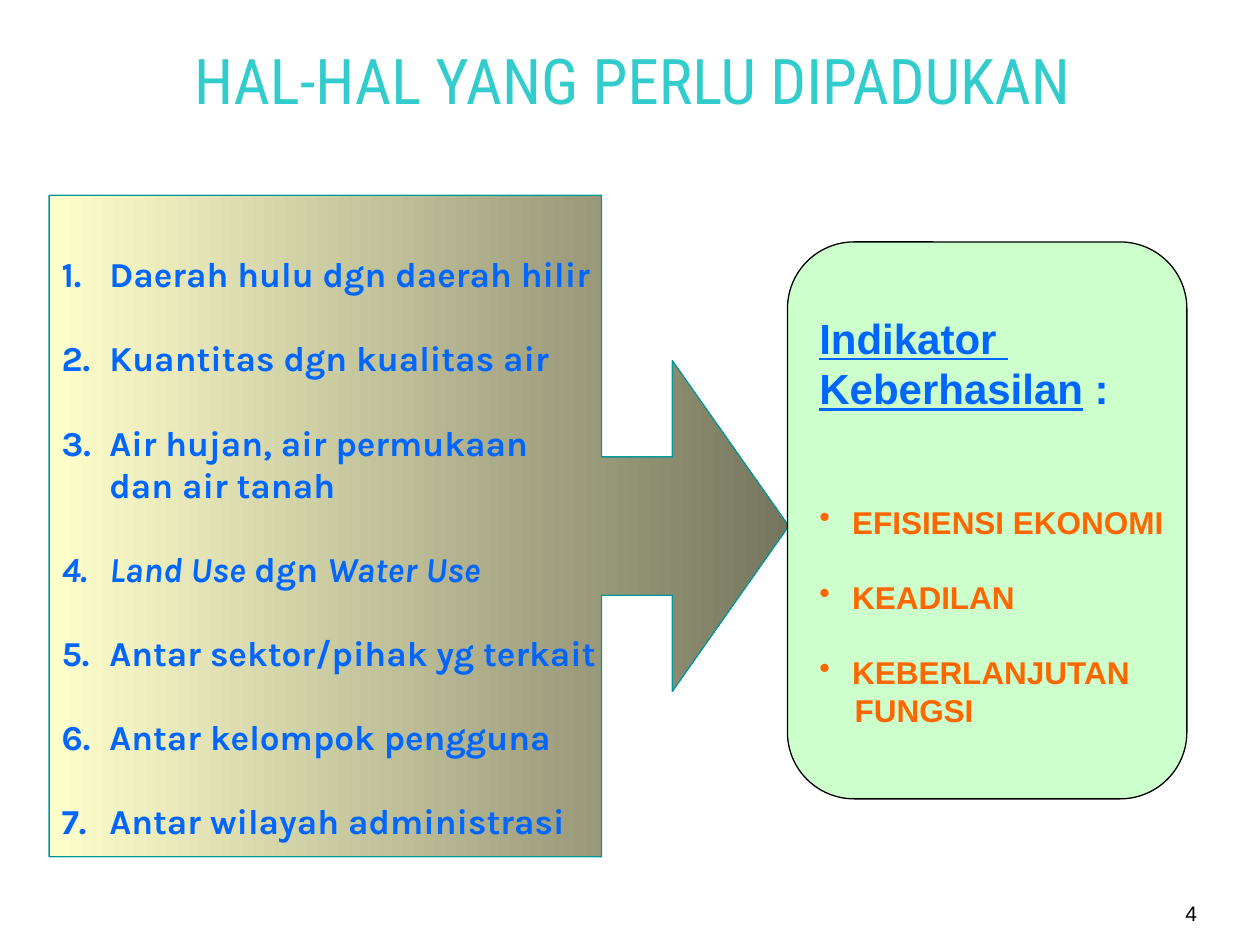
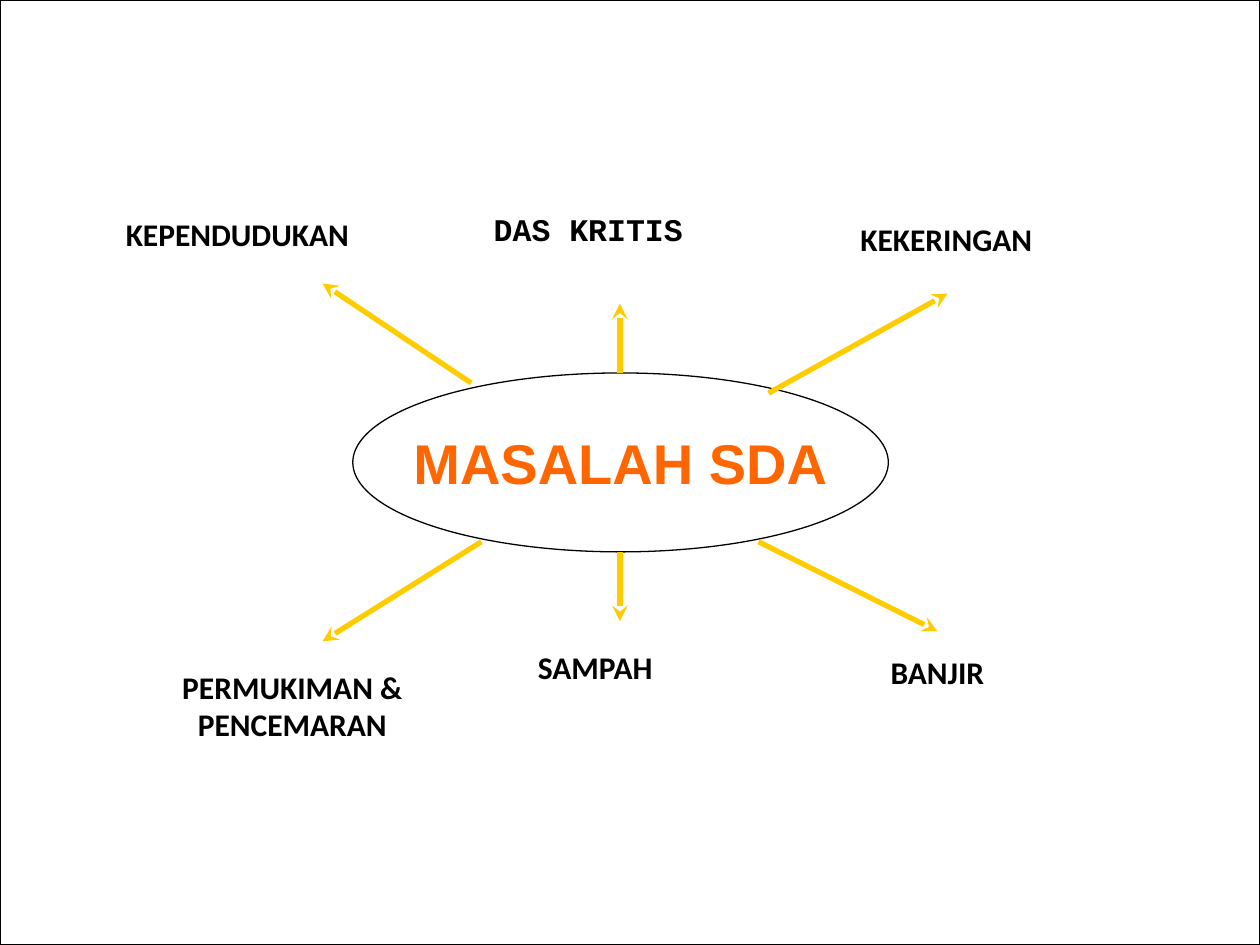
from dataclasses import dataclass

from lxml.etree import SubElement
from pptx import Presentation
from pptx.dml.color import RGBColor
from pptx.enum.shapes import MSO_CONNECTOR as Connector, MSO_SHAPE as Shape
from pptx.enum.text import MSO_ANCHOR as Anchor, PP_ALIGN as Align
from pptx.oxml.ns import qn
from pptx.util import Inches, Pt


@dataclass(frozen=True)
class Theme:
    title: str = "33CCCC"
    blue: str = "0066FF"
    orange: str = "FF6600"
    black: str = "000000"
    teal: str = "009999"
    green: str = "CCFFCC"
    yellow: str = "FFCC00"
    sand: tuple = ("FFFFCC", "76765E")
    title_size: int = 36
    hub_size: int = 32
    heading_size: int = 24
    list_size: int = 20
    label_size: int = 18
    number_size: int = 12
    hairline: float = 0.75
    arrow_line: float = 3


class Deck:
    def __init__(self, theme):
        self.theme = theme
        self.prs = Presentation()
        self.prs.slide_width, self.prs.slide_height = Inches(10), Inches(7.5)
        self.slide = None

    def new_slide(self):
        self.slide = self.prs.slides.add_slide(self.prs.slide_layouts[6])

    def shape(self, kind, box, line, fill=None, adjustments=()):
        shape = self.slide.shapes.add_shape(kind, *map(Inches, box))
        shape.shadow.inherit = False
        for index, value in enumerate(adjustments):
            shape.adjustments[index] = value
        if fill is None:
            shape.fill.background()
        elif isinstance(fill, tuple):
            shape.fill.gradient()
            shape.fill.gradient_angle = 0
            for stop, color in zip(shape.fill.gradient_stops, fill):
                stop.color.rgb = RGBColor.from_string(color)
        else:
            shape.fill.solid()
            shape.fill.fore_color.rgb = RGBColor.from_string(fill)
        shape.line.color.rgb = RGBColor.from_string(line)
        shape.line.width = Pt(self.theme.hairline)
        self.frame(shape, vertical_anchor=Anchor.MIDDLE)
        return shape

    def frame(self, shape, **formats):
        for name, value in {"word_wrap": True, **formats}.items():
            setattr(shape.text_frame, name, value)

    def paragraph(self, shape, runs, font, size, color, indent=None, bullet=None, **formats):
        frame = shape.text_frame
        paragraph = frame.paragraphs[0]
        if paragraph.runs:
            paragraph = frame.add_paragraph()
        for name, value in {"alignment": Align.LEFT, **formats}.items():
            setattr(paragraph, name, value)
        for text, style in runs:
            run = paragraph.add_run()
            run.text = text
            run.font.color.rgb = RGBColor.from_string(color)
            for name, value in {"name": font, "size": Pt(size), "bold": True, **style}.items():
                setattr(run.font, name, value)
        properties = paragraph._p.get_or_add_pPr()
        if indent:
            properties.set("marL", str(Inches(indent)))
            properties.set("indent", str(-Inches(indent) if bullet else 0))
        if bullet:
            tag, attributes = bullet
            SubElement(properties, qn(tag), attributes)

    def text(self, box, text, size, color, font, bold=True, align=Align.LEFT, **formats):
        holder = self.slide.shapes.add_textbox(*map(Inches, box))
        self.frame(holder, **formats)
        self.paragraph(holder, [(text, {"bold": bold})], font, size, color, alignment=align)

    def arrow(self, start, end):
        arrow = self.slide.shapes.add_connector(
            Connector.STRAIGHT, *map(Inches, (*start, *end)))
        arrow.line.color.rgb = RGBColor.from_string(self.theme.yellow)
        arrow.line.width = Pt(self.theme.arrow_line)
        SubElement(arrow.line._get_or_add_ln(), qn("a:tailEnd"), {"type": "stealth"})
        SubElement(arrow._element.spPr, qn("a:effectLst"))


def number_from(start):
    return "a:buAutoNum", {"type": "arabicPeriod", "startAt": str(start)}


def build_integration(deck):
    theme = deck.theme
    deck.new_slide()
    deck.text((8.67, 6.95, 0.83, 0.4), "4", theme.number_size, theme.black, "Arial",
              bold=False, align=Align.RIGHT, vertical_anchor=Anchor.BOTTOM,
              margin_left=0, margin_top=0, margin_right=0, margin_bottom=0)

    aspects = deck.shape(Shape.RIGHT_ARROW_CALLOUT, (0.39, 1.55, 5.87, 5.25), theme.teal,
                         theme.sand, (0.209, 0.25, 0.176, 0.747))
    deck.frame(aspects, margin_right=0)
    italic = {"italic": True}
    for runs, start in (
        ([("Daerah hulu dgn daerah hilir", {})], 1),
        ([("Kuantitas dgn kualitas air", {})], 1),
        ([("Air hujan, air permukaan", {})], 1),
        ([("dan air tanah", {})], None),
        ([("Land Use", italic), (" dgn ", {}), ("Water Use", italic)], 4),
        ([("Antar sektor/pihak yg terkait", {})], 4),
        ([("Antar kelompok pengguna", {})], 4),
        ([("Antar wilayah administrasi", {})], 4),
    ):
        deck.paragraph(aspects, runs, "Karla", theme.list_size, theme.blue, indent=0.38,
                       bullet=number_from(start) if start else None,
                       line_spacing=2.0 if start else 1.0)

    indicators = deck.shape(Shape.ROUNDED_RECTANGLE, (6.25, 1.92, 3.17, 4.42), theme.black,
                            theme.green, (0.167,))
    deck.frame(indicators, margin_right=0)
    underline = {"underline": True}
    for runs in ([("Indikator ", underline)], [("Keberhasilan", underline), (" :", {})]):
        deck.paragraph(indicators, runs, "Arial", theme.heading_size, theme.blue,
                       line_spacing=Pt(29))
    for text, gap in (("EFISIENSI EKONOMI", 51), ("KEADILAN", 21.5),
                      ("KEBERLANJUTAN", 21.5), ("FUNGSI", 0)):
        deck.paragraph(indicators, [(text, {})], "Arial", theme.label_size, theme.orange,
                       indent=0.26 if gap else 0.28,
                       bullet=("a:buChar", {"char": "•"}) if gap else None,
                       line_spacing=Pt(21.6), space_before=Pt(gap))

    deck.text((0.49, 0.28, 9.06, 0.94), "HAL-HAL YANG PERLU DIPADUKAN", theme.title_size,
              theme.title, "Roboto Condensed", bold=False, align=Align.CENTER)


def build_problems(deck):
    theme = deck.theme
    deck.new_slide()
    deck.shape(Shape.RECTANGLE, (0, 0, 10, 7.5), theme.black)
    for text, box, font, align in (
        ("BANJIR", (6.97, 5.13, 1.34, 0.4), "Calibri", Align.LEFT),
        ("DAS KRITIS", (3.82, 1.62, 1.89, 0.4), "Courier New", Align.LEFT),
        ("PERMUKIMAN & PENCEMARAN", (1.06, 5.25, 2.52, 0.7), "Calibri", Align.CENTER),
        ("KEPENDUDUKAN", (0.9, 1.66, 2.83, 0.4), "Calibri", Align.LEFT),
        ("KEKERINGAN", (6.73, 1.7, 2.32, 0.4), "Calibri", Align.LEFT),
        ("SAMPAH", (4.17, 5.09, 1.5, 0.4), "Calibri", Align.LEFT),
    ):
        deck.text(box, text, theme.label_size, theme.black, font, align=align)

    hub = deck.shape(Shape.OVAL, (2.8, 2.96, 4.25, 1.42), theme.black)
    deck.frame(hub, word_wrap=False)
    deck.paragraph(hub, [("MASALAH SDA", {})], "Arial", theme.hub_size, theme.orange,
                   alignment=Align.CENTER)
    for start, end in (
        ((6.1, 3.12), (7.52, 2.33)),
        ((3.74, 3.04), (2.56, 2.25)),
        ((6.02, 4.3), (7.44, 5.01)),
        ((3.82, 4.3), (2.56, 5.09)),
        ((4.92, 2.96), (4.92, 2.41)),
        ((4.92, 4.38), (4.92, 4.93)),
    ):
        deck.arrow(start, end)


def main():
    deck = Deck(Theme())
    build_integration(deck)
    build_problems(deck)
    deck.prs.save("out.pptx")


if __name__ == "__main__":
    main()
